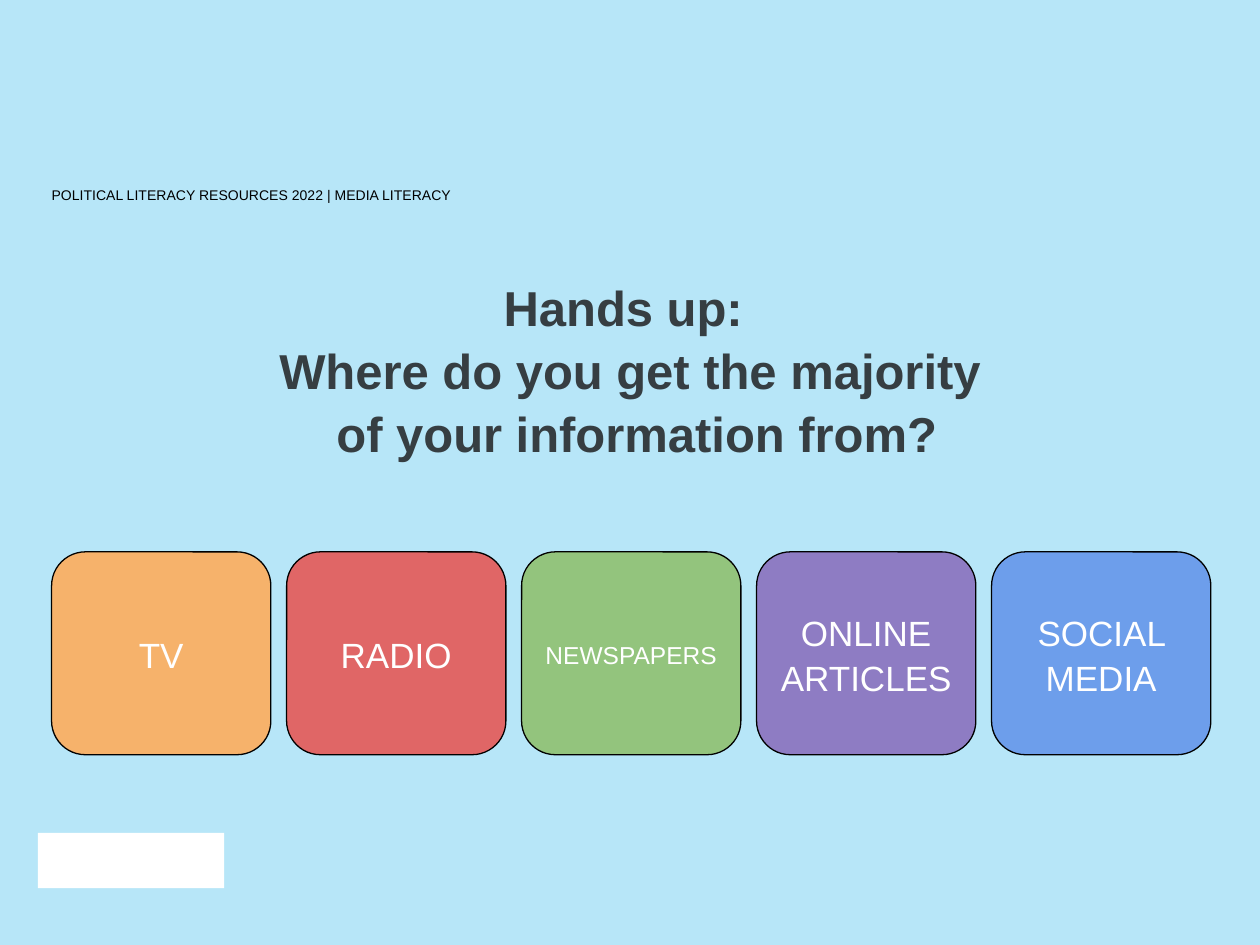
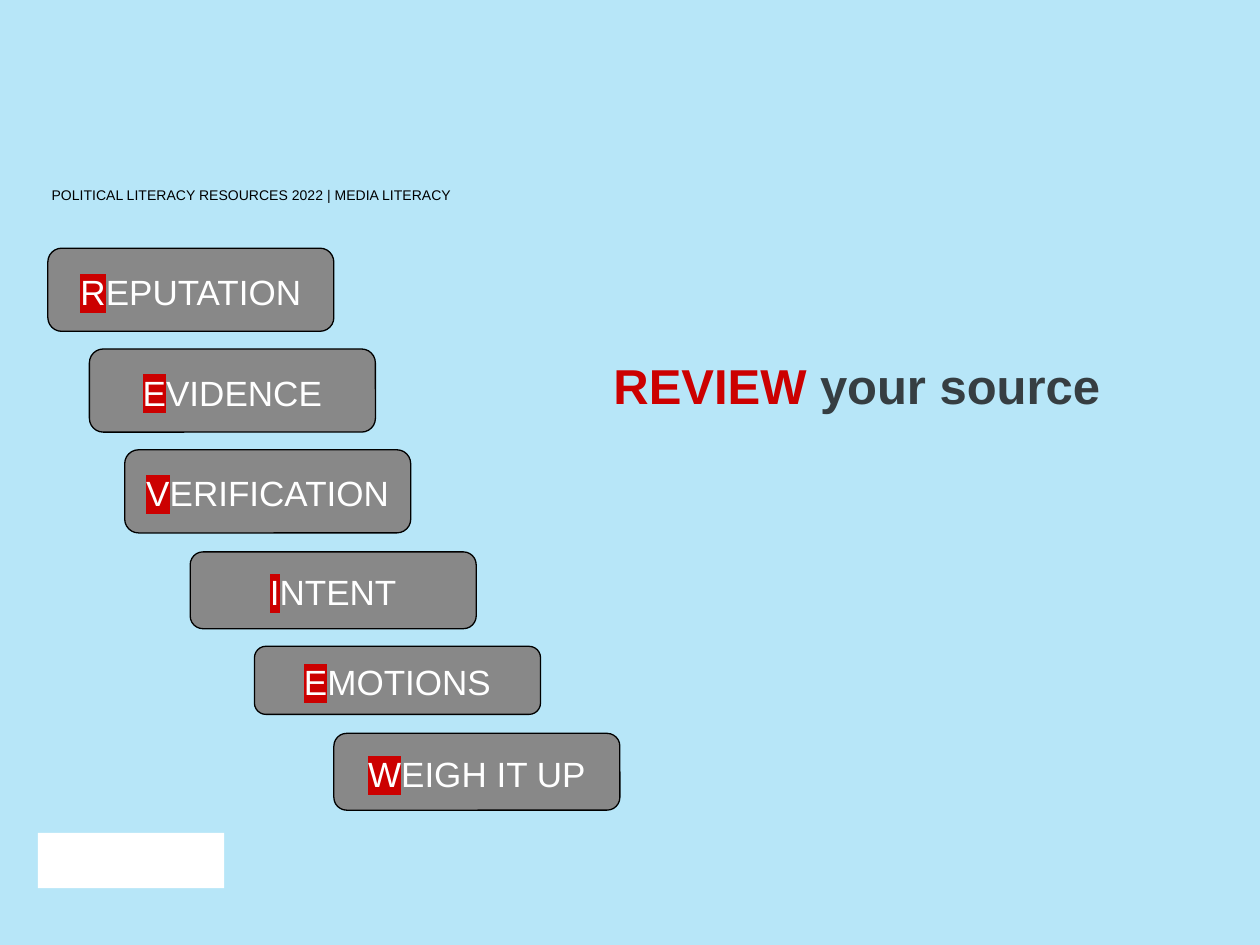
from lxml import etree
from pptx import Presentation
from pptx.dml.color import RGBColor
from pptx.enum.shapes import MSO_SHAPE
from pptx.enum.text import MSO_ANCHOR, MSO_AUTO_SIZE, PP_ALIGN
from pptx.oxml.ns import qn
from pptx.util import Inches, Pt

SKY = RGBColor(0xB7, 0xE6, 0xF8)
WHITE = RGBColor(0xFF, 0xFF, 0xFF)
BLACK = RGBColor(0x00, 0x00, 0x00)
SLATE = RGBColor(0x36, 0x3E, 0x42)
RED = RGBColor(0xCC, 0x00, 0x00)
GREY = RGBColor(0x88, 0x88, 0x88)
ORANGE = RGBColor(0xF6, 0xB2, 0x6B)
CORAL = RGBColor(0xE0, 0x66, 0x66)
GREEN = RGBColor(0x93, 0xC4, 0x7D)
PURPLE = RGBColor(0x8E, 0x7C, 0xC3)
BLUE = RGBColor(0x6D, 0x9E, 0xEB)
FONT = "Arial"


def write(sp, paragraphs, size=20, color=WHITE, bold=False, align=PP_ALIGN.CENTER,
          anchor=MSO_ANCHOR.TOP, inset=0, spacing=1.07):
    """Fill sp; a paragraph is a list of (text, {color, highlight}) runs."""
    tf = sp.text_frame
    tf.word_wrap = True
    tf.auto_size = MSO_AUTO_SIZE.NONE
    tf.vertical_anchor = anchor
    tf.margin_left = tf.margin_right = tf.margin_top = tf.margin_bottom = Inches(inset)
    for i, runs in enumerate(paragraphs):
        p = tf.paragraphs[0] if i == 0 else tf.add_paragraph()
        p.alignment = align
        p.line_spacing = spacing
        p.space_before = Pt(0)
        for text, style in runs:
            for j, line in enumerate(text.split("\n")):
                if j:
                    p.add_line_break()
                r = p.add_run()
                r.text = line
                r.font.name, r.font.size, r.font.bold = FONT, Pt(size), bold
                r.font.color.rgb = style.get("color", color)
                if "highlight" in style:
                    mark = etree.Element(qn("a:highlight"))
                    etree.SubElement(mark, qn("a:srgbClr"), val=str(style["highlight"]))
                    r.font.fill  # the fill element comes right before the highlight
                    r._r.rPr.find(qn("a:solidFill")).addnext(mark)


def add_box(s, kind, left, top, width, height, fill, line=None):
    sp = s.shapes.add_shape(kind, Inches(left), Inches(top), Inches(width), Inches(height))
    sp.shadow.inherit = False
    sp.fill.solid()
    sp.fill.fore_color.rgb = fill
    if line is None:
        sp.line.fill.background()
    else:
        sp.line.color.rgb = line
        sp.line.width = Pt(0.75)
    return sp


prs = Presentation()
prs.slide_width, prs.slide_height = Inches(10), Inches(7.5)
background = prs.slide_master.background.fill
background.solid()
background.fore_color.rgb = SKY

# Shared parts: title, footer band and running header
titles = [
    ((0.4, 2.17, 9.2, 1.22),
     [[("Hands up: \nWhere do you get the majority", {})],
      [(" of your information from?", {})]]),
    ((3.91, 2.79, 5.78, 0.66),
     [[("REVIEW", {"color": RED}), (" your source", {})]]),
]
slides = []
for position, paragraphs in titles:
    s = prs.slides.add_slide(prs.slide_layouts[5])
    title = s.shapes.title
    title.left, title.top, title.width, title.height = map(Inches, position)
    write(title, paragraphs, size=28, color=SLATE, bold=True)
    add_box(s, MSO_SHAPE.RECTANGLE, 0.3, 6.61, 1.48, 0.44, WHITE)
    header = s.shapes.add_textbox(Inches(0.41), Inches(1.48), Inches(7), Inches(0.2))
    write(header, [[("POLITICAL LITERACY RESOURCES 2022 | MEDIA LITERACY", {})]],
          size=8, color=BLACK, align=PP_ALIGN.LEFT, spacing=1.0)
    slides.append(s)
hands_up, review = slides

# Slide 1: row of information sources
sources = [("TV", ORANGE, 20), ("RADIO", CORAL, 20), ("NEWSPAPERS", GREEN, 14),
           ("ONLINE ARTICLES", PURPLE, 20), ("SOCIAL MEDIA", BLUE, 20)]
pitch = (7.87 - 0.41) / (len(sources) - 1)
for i, (name, fill, size) in enumerate(sources):
    sp = add_box(hands_up, MSO_SHAPE.ROUNDED_RECTANGLE, 0.41 + i * pitch, 4.38,
                 1.74, 1.61, fill, BLACK)
    write(sp, [[(name, {})]], size=size, anchor=MSO_ANCHOR.MIDDLE, inset=0.1)

# Slide 2: staircase of checks, initials spelling REVIEW
checks = [("REPUTATION", 0.38, 1.97, 0.66), ("EVIDENCE", 0.71, 2.77, 0.66),
          ("VERIFICATION", 0.99, 3.57, 0.66), ("INTENT", 1.51, 4.38, 0.61),
          ("EMOTIONS", 2.02, 5.13, 0.54), ("WEIGH IT UP", 2.65, 5.82, 0.61)]
for name, left, top, height in checks:
    sp = add_box(review, MSO_SHAPE.ROUNDED_RECTANGLE, left, top, 2.27, height, GREY, BLACK)
    write(sp, [[(name[0], {"highlight": RED}), (name[1:], {})]],
          anchor=MSO_ANCHOR.MIDDLE, inset=0.1)

prs.save("out.pptx")
